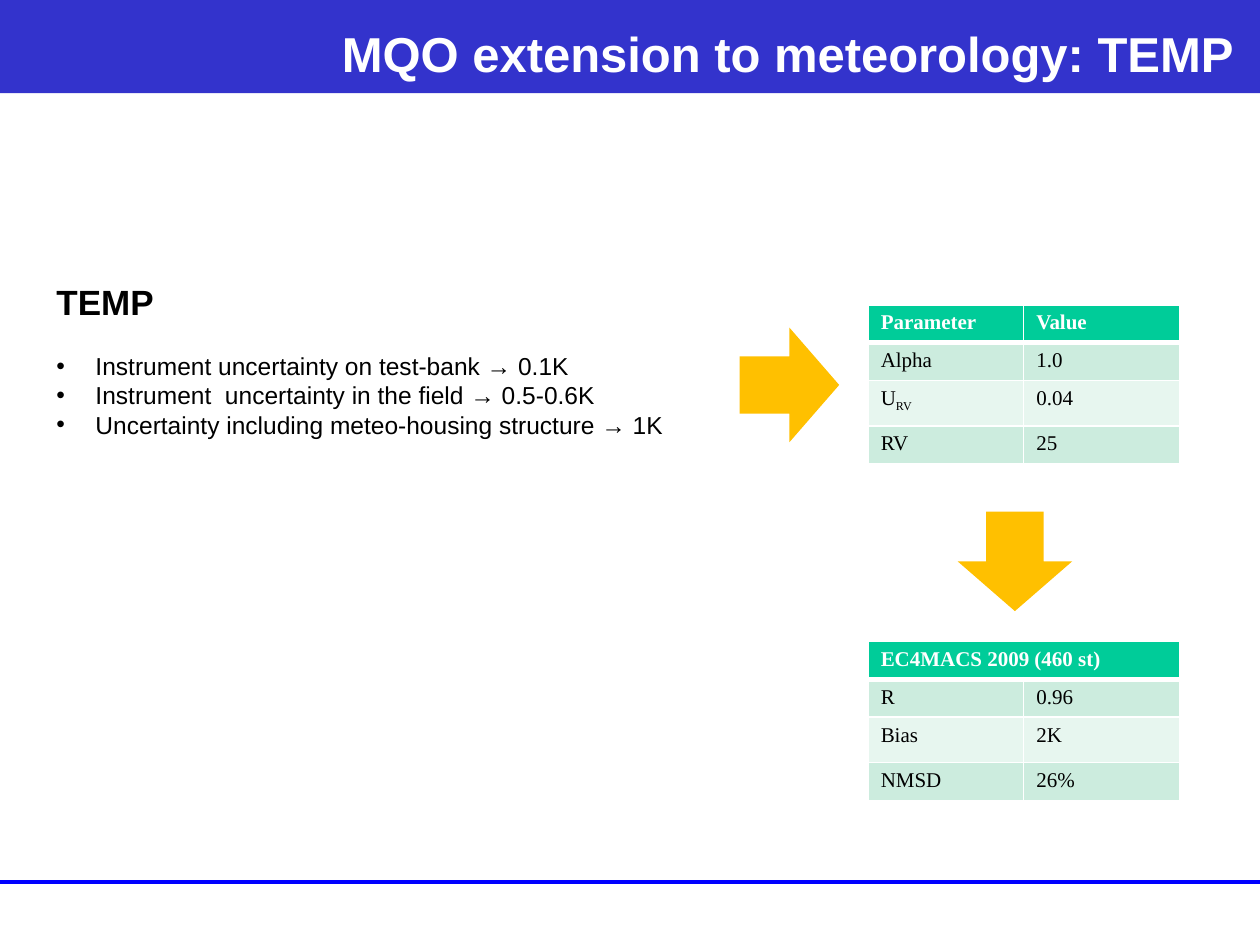
from dataclasses import dataclass

from lxml.etree import SubElement
from pptx import Presentation
from pptx.dml.color import RGBColor as Color
from pptx.enum.shapes import MSO_CONNECTOR as Connector, MSO_SHAPE as Shape
from pptx.enum.text import MSO_ANCHOR as Anchor, PP_ALIGN as Align
from pptx.oxml.ns import qn
from pptx.util import Inches, Pt


@dataclass(frozen=True)
class Theme:
    """Colours, fonts and type sizes of the slide."""
    banner: str = "3333CC"
    rule: str = "0000FF"
    arrow: str = "FFC000"
    header: str = "00CC99"
    bands: tuple = ("CCECDE", "E7F6EF")
    light: str = "FFFFFF"
    dark: str = "000000"
    sans: str = "Arial"
    serif: str = "Times New Roman"
    title_size: int = 28
    heading_size: int = 20
    body_size: int = 14
    table_size: int = 12


THEME = Theme()
ROW_HEIGHTS = (0.29, 0.3, 0.36, 0.3)


def set_font(font, name, size, color, bold=False):
    """Apply typeface, size, colour and weight to a font."""
    font.name, font.size, font.bold = name, Pt(size), bold
    font.color.rgb = Color.from_string(color)


def add_block(page, kind, left, top, width, height, color):
    """Add a flat preset shape without outline or shadow."""
    block = page.shapes.add_shape(
        kind, Inches(left), Inches(top), Inches(width), Inches(height))
    block.shadow.inherit = False
    block.fill.solid()
    block.fill.fore_color.rgb = Color.from_string(color)
    block.line.fill.background()
    return block


def add_banner(page, left, top, width, height, title):
    """Add the title banner with right-aligned text."""
    add_block(page, Shape.RECTANGLE, left, top, width, height, THEME.banner)
    box = page.shapes.add_textbox(
        Inches(left), Inches(top + 0.11), Inches(width), Inches(0.62))
    frame = box.text_frame
    frame.word_wrap = True
    frame.vertical_anchor = Anchor.MIDDLE
    frame.margin_right = Inches(0.21)
    frame.text = title
    para = frame.paragraphs[0]
    para.alignment = Align.RIGHT
    set_font(para.runs[0].font, THEME.sans, THEME.title_size, THEME.light, True)


def add_footer_rule(page, left, top, width):
    """Add the horizontal rule above the footer."""
    rule = page.shapes.add_connector(
        Connector.STRAIGHT, Inches(left), Inches(top), Inches(left + width), Inches(top))
    rule.line.color.rgb = Color.from_string(THEME.rule)
    rule.line.width = Pt(2)
    SubElement(rule._element.spPr, qn("a:effectLst"))


def add_bullet(para):
    """Give a paragraph a hanging round bullet."""
    props = para._p.get_or_add_pPr()
    props.set("marL", str(Inches(0.31)))
    props.set("indent", str(-Inches(0.31)))
    SubElement(props, qn("a:buFont"), typeface=THEME.sans)
    SubElement(props, qn("a:buChar"), char="•")


def add_uncertainty_list(page, left, top, width, height, heading, items):
    """Add a bold heading followed by bulleted items."""
    box = page.shapes.add_textbox(
        Inches(left), Inches(top), Inches(width), Inches(height))
    frame = box.text_frame
    frame.word_wrap = False
    frame.text = heading
    set_font(frame.paragraphs[0].runs[0].font,
             THEME.sans, THEME.heading_size, THEME.dark, True)
    for index, item in enumerate(items):
        para = frame.add_paragraph()
        para.text = item
        add_bullet(para)
        if index == 0:
            para.space_before = Pt(16)
        set_font(para.runs[0].font, THEME.sans, THEME.body_size, THEME.dark)


def add_borders(cell, bottom):
    """Draw light borders round a cell, with the given bottom width."""
    props = cell._tc.get_or_add_tcPr()
    for side, points in (("L", 1), ("R", 1), ("T", 1), ("B", bottom)):
        border = SubElement(props, qn(f"a:ln{side}"), w=str(Pt(points)))
        fill = SubElement(border, qn("a:solidFill"))
        SubElement(fill, qn("a:srgbClr"), val=THEME.light)


def fill_cell(cell, text, is_header, color):
    """Write and style one cell; text after an underscore is a subscript."""
    add_borders(cell, 3 if is_header else 1)
    cell.fill.solid()
    cell.fill.fore_color.rgb = Color.from_string(color)
    para = cell.text_frame.paragraphs[0]
    ink = THEME.light if is_header else THEME.dark
    for index, part in enumerate(text.split("_") if text else ()):
        span = para.add_run()
        span.text = part
        set_font(span.font, THEME.serif, THEME.table_size, ink, is_header)
        if index:
            span.font._element.set("baseline", "-25000")


def add_value_table(page, left, top, width, rows):
    """Add a banded table; a one-item header spans all columns."""
    columns = len(rows[-1])
    table = page.shapes.add_table(
        len(rows), columns, Inches(left), Inches(top),
        Inches(width), Inches(sum(ROW_HEIGHTS))).table
    for row, height in zip(table.rows, ROW_HEIGHTS):
        row.height = Inches(height)
    for row_index, texts in enumerate(rows):
        is_header = row_index == 0
        color = THEME.header if is_header else THEME.bands[(row_index - 1) % 2]
        for column in range(columns):
            text = texts[column] if column < len(texts) else ""
            fill_cell(table.cell(row_index, column), text, is_header, color)
    if len(rows[0]) == 1:
        table.cell(0, 0).merge(table.cell(0, columns - 1))


def add_arrow(page, left, top, width, height, rotation=0):
    """Add a block arrow pointing down, turned by the given degrees."""
    arrow = add_block(page, Shape.DOWN_ARROW, left, top, width, height, THEME.arrow)
    arrow.rotation = rotation


def build_temperature_slide(deck):
    """Lay out the temperature slide."""
    page = deck.slides.add_slide(deck.slide_layouts[6])
    add_footer_rule(page, 0, 7, 10)
    add_banner(page, 0, 0, 10, 0.74, "MQO extension to meteorology: TEMP")
    add_uncertainty_list(page, 0.35, 2.18, 5.04, 1.38, "TEMP", (
        "Instrument uncertainty on test-bank → 0.1K",
        "Instrument  uncertainty in the field → 0.5-0.6K",
        "Uncertainty including meteo-housing structure → 1K"))
    add_value_table(page, 6.89, 2.42, 2.47, (
        ("Parameter", "Value"), ("Alpha", "1.0"), ("U_RV", "0.04"), ("RV", "25")))
    add_arrow(page, 5.81, 2.66, 0.91, 0.79, 270)
    add_value_table(page, 6.89, 5.09, 2.47, (
        ("EC4MACS 2009 (460 st)",), ("R", "0.96"), ("Bias", "2K"), ("NMSD", "26%")))
    add_arrow(page, 7.6, 4.06, 0.91, 0.79)


def main():
    """Build and save the deck."""
    deck = Presentation()
    deck.slide_width, deck.slide_height = Inches(10), Inches(7.5)
    build_temperature_slide(deck)
    deck.save("out.pptx")


if __name__ == "__main__":
    main()
